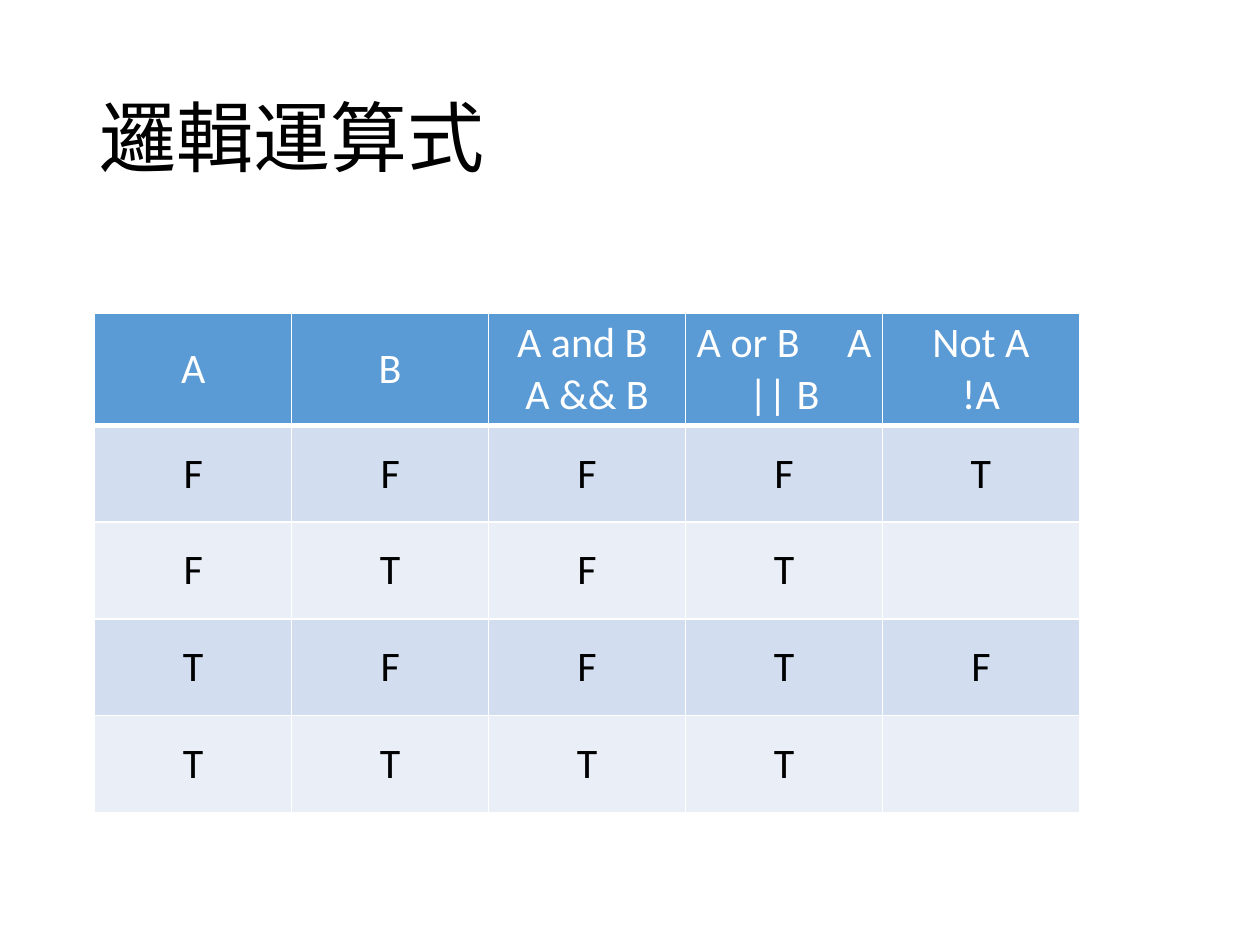
from pptx import Presentation
from pptx.dml.color import RGBColor
from pptx.enum import text
from pptx.oxml import parse_xml
from pptx.oxml.ns import nsdecls
from pptx.util import Cm, Pt

TITLE = "邏輯運算式"
GAP = " "  # a run holding only this is drawn as a wide gap
# Each header cell is a list of paragraphs, each paragraph a list of runs
HEAD = [
    [["A"]],
    [["B"]],
    [["A and B "], ["A && B"]],
    [["A or B", GAP, "A || B"]],
    [["Not A"], ["!A"]],
]
TRUTH = ["FFFFT", "FTFT", "TFFTF", "TTTT"]
FONT = "Calibri"
WHITE, BLACK, BLUE = "FFFFFF", "000000", "5B9BD5"
BANDS = ["D2DEEF", "EAEFF7"]
COL_W, HEAD_H, ROW_H = Cm(3.97), Cm(2.24), Cm(1.95)


def rgb(code):
    return RGBColor.from_string(code)


def add_run(para, words, size, color):
    run = para.add_run()
    run.text = words
    run.font.size = Pt(size)
    run.font.name = FONT
    run.font.color.rgb = rgb(color)
    return run


def add_edges(cell, low):
    """Draw white cell borders, the bottom one `low` points wide."""
    props = cell._tc.get_or_add_tcPr()
    for spot, (side, width) in enumerate(zip("LRTB", (1, 1, 1, low))):
        props.insert(spot, parse_xml(
            f'<a:ln{side} {nsdecls("a")} w="{Pt(width)}"><a:solidFill>'
            f'<a:srgbClr val="{WHITE}"/></a:solidFill></a:ln{side}>'))


def fill_cell(cell, paras, fill, color, low):
    cell.fill.solid()
    cell.fill.fore_color.rgb = rgb(fill)
    add_edges(cell, low)
    cell.vertical_anchor = text.MSO_ANCHOR.MIDDLE
    cell.margin_left = cell.margin_right = Cm(0.18)
    cell.margin_top = cell.margin_bottom = Cm(0.1)
    frame = cell.text_frame
    for i, runs in enumerate(paras):
        para = frame.paragraphs[0] if i == 0 else frame.add_paragraph()
        para.alignment = text.PP_ALIGN.CENTER
        for words in runs:
            run = add_run(para, words, 24, color)
            if words == GAP:
                run._r.get_or_add_rPr().set("spc", "2170")


def add_title(slide):
    title = slide.shapes.title
    title.left, title.top = Cm(1.75), Cm(1.01)
    title.width, title.height = Cm(21.9), Cm(3.68)
    frame = title.text_frame
    frame.vertical_anchor = text.MSO_ANCHOR.MIDDLE
    para = frame.paragraphs[0]
    para.alignment = text.PP_ALIGN.LEFT
    para.line_spacing = 0.9
    add_run(para, TITLE, 44, BLACK)


def add_truth(slide):
    rows, cols = len(TRUTH) + 1, len(HEAD)
    table = slide.shapes.add_table(
        rows, cols, Cm(1.91), Cm(6.31),
        COL_W * cols, HEAD_H + ROW_H * len(TRUTH)).table
    for col in table.columns:
        col.width = COL_W
    for i, row in enumerate(table.rows):
        row.height = ROW_H if i else HEAD_H
    for c, paras in enumerate(HEAD):
        fill_cell(table.cell(0, c), paras, BLUE, WHITE, 3)
        for r, marks in enumerate(TRUTH):
            mark = [[m] for m in marks[c:c + 1]]
            fill_cell(table.cell(r + 1, c), mark, BANDS[r % 2], BLACK, 1)


def main():
    deck = Presentation()
    deck.slide_width, deck.slide_height = Cm(25.4), Cm(19.05)
    slide = deck.slides.add_slide(deck.slide_layouts[5])
    add_title(slide)
    add_truth(slide)
    deck.save("out.pptx")


if __name__ == "__main__":
    main()
